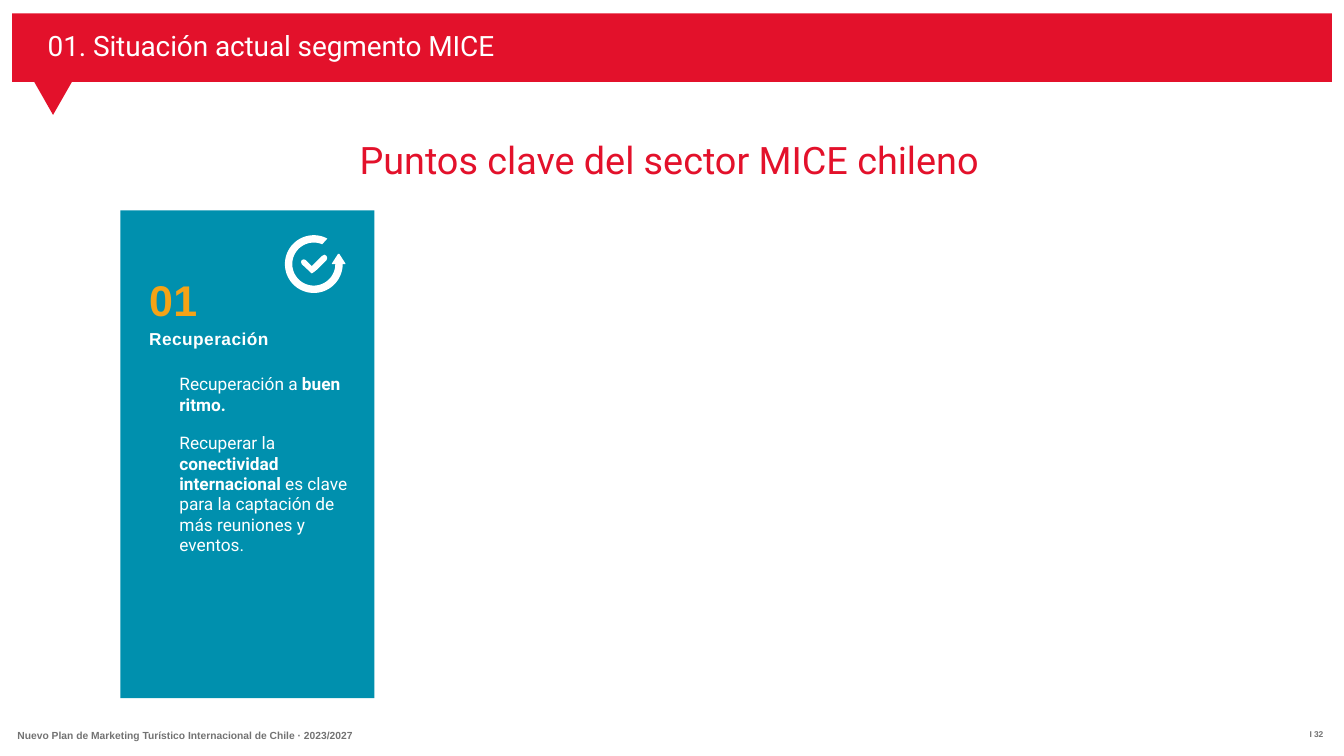
from math import cos, radians, sin

from pptx import Presentation
from pptx.dml.color import RGBColor
from pptx.enum.shapes import MSO_SHAPE as Shape
from pptx.util import Inches, Pt

RED, TEAL, ORANGE, WHITE, GREY = "E3112B", "0090AE", "F5A316", "FFFFFF", "737373"


def color(hex_text):
    return RGBColor.from_string(hex_text)


def paint(shape, fill):
    """Flat fill without outline or shadow."""
    shape.shadow.inherit = False
    shape.fill.solid()
    shape.fill.fore_color.rgb = color(fill)
    shape.line.fill.background()


def add_outline(page, contours, fill, left=0, top=0):
    """Filled outline; points are inches from left and top."""
    placed = [[(Inches(left + x), Inches(top + y)) for x, y in points]
              for points in contours]
    builder = page.shapes.build_freeform(*placed[0][0], scale=1.0)
    builder.add_line_segments(placed[0][1:], close=True)
    for points in placed[1:]:
        builder.move_to(*points[0])
        builder.add_line_segments(points[1:], close=True)
    paint(builder.convert_to_shape(), fill)


def add_box(page, left, top, width, height, inset_top=0, inset_right=0, wrap=True):
    box = page.shapes.add_textbox(
        Inches(left), Inches(top), Inches(width), Inches(height))
    frame = box.text_frame
    frame.word_wrap = wrap
    frame.margin_left = frame.margin_bottom = 0
    frame.margin_top, frame.margin_right = Inches(inset_top), Inches(inset_right)
    return frame


def write(frame, text, size=18.5, font="Roboto", fill=WHITE, bold=False,
          indent=0.01, before=0, line=None, tracking=0):
    """Add a paragraph; parts between asterisks switch bold on and off."""
    first = frame.paragraphs[0]
    para = frame.add_paragraph() if first.runs else first
    if before:
        para.space_before = Pt(before)
    if line:
        para.line_spacing = Pt(line)
    para._p.get_or_add_pPr().set("marL", str(Inches(indent)))
    for index, part in enumerate(text.split("*")):
        if not part:
            continue
        span = para.add_run()
        span.text = part
        span.font.size, span.font.name = Pt(size), font
        span.font.bold = bold or index % 2 == 1
        span.font.color.rgb = color(fill)
        if tracking:
            span._r.get_or_add_rPr().set("spc", str(round(tracking * 100)))


def add_banner(page, left, top, width, height):
    """Red band with a pointer below its left end."""
    add_outline(page, [[(0, 0), (width, 0), (width, height), (0.89, height),
                        (0.61, height + 0.49), (0.33, height), (0, height)]],
                RED, left, top)
    frame = add_box(page, left + 0.52, top + 0.22, 6.73, 0.53, inset_top=0.01)
    write(frame, "01. Situación actual segmento MICE", size=30, tracking=-0.1)


def add_title(page, left, top, width, height):
    frame = add_box(page, left, top, width, height, inset_top=0.01)
    write(frame, "Puntos clave del sector MICE chileno", size=40.5, fill=RED,
          tracking=-0.05)


def arc(center, radius, start, end, step=5):
    count = round(abs(end - start) / step)
    angles = [radians(start + (end - start) * i / count) for i in range(count + 1)]
    return [(center + radius * cos(a), center + radius * sin(a)) for a in angles]


def add_recovery_icon(page, left, top):
    """Open ring ending in an arrow, with a check mark inside."""
    center = 0.42
    ring = arc(center, 0.43, 0, 298) + arc(center, 0.32, 293, 0)
    arrow = [(0.69, 0.42), (0.69, 0.41), (0.78, 0.27), (0.8, 0.27),
             (0.89, 0.41), (0.89, 0.42)]
    check = [(0.39, 0.56), (0.24, 0.42), (0.23, 0.39), (0.24, 0.36), (0.27, 0.35),
             (0.3, 0.36), (0.39, 0.45), (0.54, 0.3), (0.58, 0.28), (0.61, 0.3),
             (0.62, 0.33), (0.61, 0.36), (0.47, 0.5), (0.42, 0.54)]
    add_outline(page, [ring, arrow, check], WHITE, left, top)


def add_card(page, left, top, width, height):
    """Teal card with icon, number, heading and key points."""
    panel = page.shapes.add_shape(
        Shape.RECTANGLE, Inches(left), Inches(top), Inches(width), Inches(height))
    paint(panel, TEAL)
    add_recovery_icon(page, left + 2.46, top + 0.38)

    frame = add_box(page, left, top, width, height, inset_top=0.94, inset_right=0.3)
    write(frame, "01", size=46, font="Arial", fill=ORANGE, bold=True,
          indent=0.43, tracking=0.3)
    write(frame, "Recuperación", font="Arial", bold=True, indent=0.43,
          before=3, tracking=0.5)
    write(frame, "Recuperación a *buen ritmo.*", indent=0.88, before=27, line=21.8)
    write(frame, "Recuperar la *conectividad internacional* es clave para la "
          "captación de más reuniones y eventos.", indent=0.88, before=20, line=21.7)


def add_footer(page, left, top, width):
    plan = add_box(page, left, top, 5.16, 0.18)
    write(plan, "Nuevo Plan de Marketing Turístico Internacional de Chile · 2023/2027",
          size=11, font="Arial", fill=GREY, bold=True, line=12.2)
    number = add_box(page, left + width - 0.24, top, 0.24, 0.16, wrap=False)
    write(number, "I 32", size=9, font="Arial", fill=GREY, bold=True, line=10.3,
          tracking=-0.1)


def main():
    deck = Presentation()
    deck.slide_width, deck.slide_height = Inches(20), Inches(11.25)
    page = deck.slides.add_slide(deck.slide_layouts[6])
    add_banner(page, 0.18, 0.2, 19.64, 1.02)
    add_title(page, 5.34, 2.03, 9.28, 0.7)
    add_card(page, 1.79, 3.13, 3.78, 7.26)
    add_footer(page, 0.25, 10.86, 19.47)
    deck.save("out.pptx")


if __name__ == "__main__":
    main()
